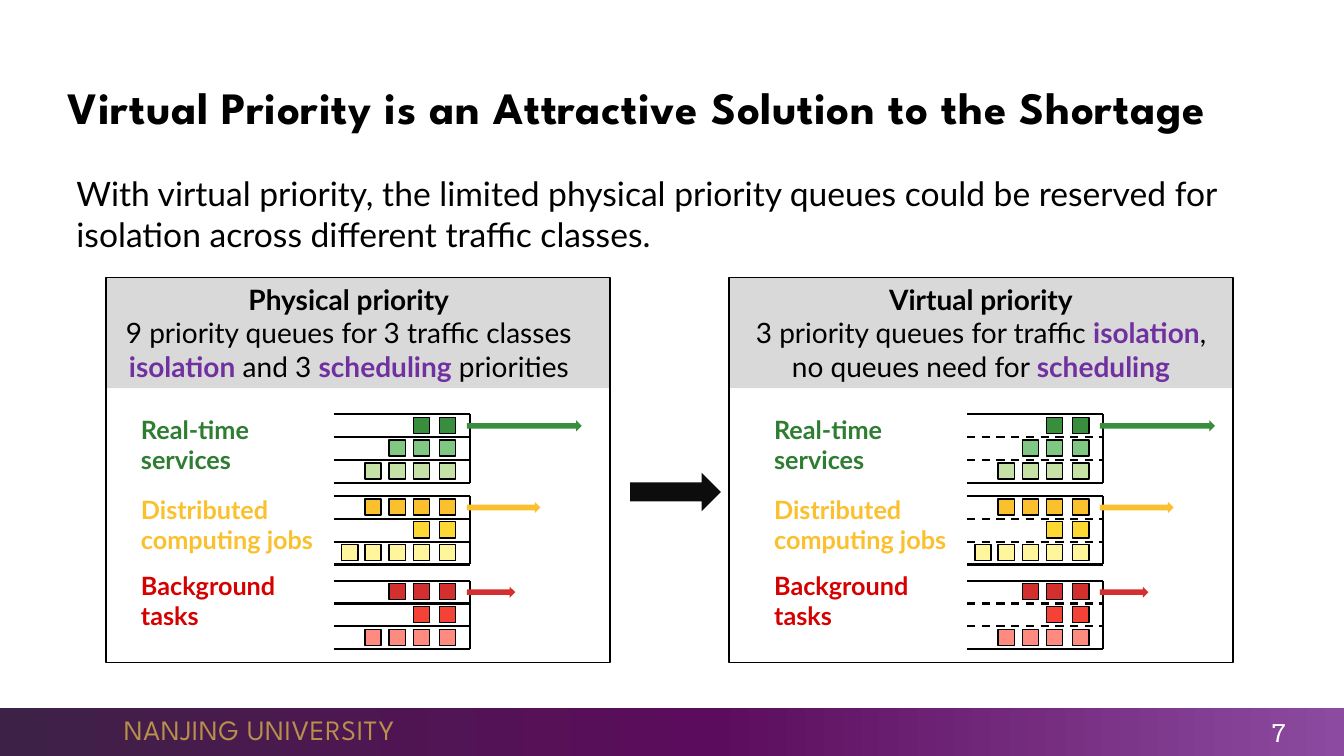
from copy import deepcopy
from dataclasses import dataclass

from pptx import Presentation
from pptx.dml.color import RGBColor
from pptx.enum.dml import MSO_LINE_DASH_STYLE
from pptx.enum.shapes import MSO_CONNECTOR, MSO_SHAPE
from pptx.enum.text import MSO_ANCHOR, PP_ALIGN
from pptx.oxml.ns import qn
from pptx.util import Inches, Pt

RECTANGLE, ARROW = MSO_SHAPE.RECTANGLE, MSO_SHAPE.RIGHT_ARROW
STRAIGHT, DASH = MSO_CONNECTOR.STRAIGHT, MSO_LINE_DASH_STYLE.DASH
TOP, MIDDLE = MSO_ANCHOR.TOP, MSO_ANCHOR.MIDDLE
LEFT, CENTER, RIGHT = PP_ALIGN.LEFT, PP_ALIGN.CENTER, PP_ALIGN.RIGHT


@dataclass(frozen=True)
class Theme:
    body_font: str = "Lato"
    title_font: str = "League Spartan"
    number_font: str = "Roboto Slab"
    title_size: int = 32
    body_size: int = 24
    heading_size: int = 20
    label_size: int = 18
    black: str = "000000"
    white: str = "FFFFFF"
    gold: str = "B88F4C"
    purple: str = "7030A0"
    panel_gray: str = "D9D9D9"
    big_arrow: str = "0D0D0D"
    footer: tuple = ((0, "3E2146"), (0.53, "5C0C5C"), (1, "8C4BA0"))
    green_label: str = "2E7D32"
    greens: tuple = ("388E3C", "81C784", "C5E1A5")
    yellow_label: str = "FBC02D"
    yellows: tuple = ("FBC02D", "FDD835", "FFF59D")
    red_label: str = "D50000"
    reds: tuple = ("D32F2F", "F44336", "FF8A80")


THEME = Theme()

# Traffic classes: label paragraphs, label top, queue top, label colour,
# queue colours, packets in each queue, length of the outgoing arrow
TRAFFIC_CLASSES = (
    (["Real-time services"], 4.06, 4.11, THEME.green_label, THEME.greens, (2, 3, 4), 1.14),
    (["Distributed computing jobs"], 4.85, 4.92, THEME.yellow_label, THEME.yellows, (4, 2, 5), 0.73),
    (["Background", "tasks"], 5.61, 5.76, THEME.red_label, THEME.reds, (3, 2, 4), 0.48),
)
QUEUE_LENGTH = 1.35
QUEUE_HEIGHT = 0.68 / 3
PACKET_SIZE = 0.16
PACKET_OFFSETS = (0.3, 0.56, 0.8, 1.04, 1.27)  # leftward from the queue exit


def write_run(paragraph, text, *, size, font, color, bold=False, spacing=0):
    run = paragraph.add_run()
    run.text = text
    run.font.size = Pt(size)
    run.font.name = font
    run.font.bold = bold
    run.font.color.rgb = RGBColor.from_string(color)
    if spacing:
        run.font._element.set("spc", str(int(spacing * 100)))


class SlideBuilder:
    def __init__(self, slide, theme):
        self.slide = slide
        self.theme = theme

    def shape(self, kind, left, top, width, height, fill=None, outlined=False):
        shape = self.slide.shapes.add_shape(
            kind, Inches(left), Inches(top), Inches(width), Inches(height))
        shape.shadow.inherit = False
        if fill:
            shape.fill.solid()
            shape.fill.fore_color.rgb = RGBColor.from_string(fill)
        else:
            shape.fill.background()
        if outlined:
            shape.line.color.rgb = RGBColor.from_string(self.theme.black)
            shape.line.width = Pt(1)
        else:
            shape.line.fill.background()
        return shape

    def line(self, start_x, start_y, end_x, end_y, dashed=False):
        connector = self.slide.shapes.add_connector(
            STRAIGHT, Inches(start_x), Inches(start_y), Inches(end_x), Inches(end_y))
        connector.line.color.rgb = RGBColor.from_string(self.theme.black)
        connector.line.width = Pt(1.5)
        if dashed:
            connector.line.dash_style = DASH
        properties = connector._element.spPr
        properties.append(properties.makeelement(qn("a:effectLst"), {}))

    def text(self, left, top, width, height, paragraphs, *, align=LEFT, anchor=TOP, **style):
        """Each paragraph is a string or a list of (text, style changes)."""
        box = self.slide.shapes.add_textbox(
            Inches(left), Inches(top), Inches(width), Inches(height))
        frame = box.text_frame
        frame.word_wrap = True
        frame.vertical_anchor = anchor
        for index, content in enumerate(paragraphs):
            paragraph = frame.add_paragraph() if index else frame.paragraphs[0]
            paragraph.alignment = align
            runs = [(content, {})] if isinstance(content, str) else content
            for text, changes in runs:
                write_run(paragraph, text, **{**style, **changes})

    def footer(self):
        theme = self.theme
        band = self.shape(RECTANGLE, 0, 7.02, 13.33, 0.48)
        band.fill.gradient()
        band.fill.gradient_angle = 0
        stop_list = band._element.spPr.find(qn("a:gradFill")).find(qn("a:gsLst"))
        stop_list.insert(1, deepcopy(stop_list[0]))
        for stop, (position, color) in zip(band.fill.gradient_stops, theme.footer):
            stop.position = position
            stop.color.rgb = RGBColor.from_string(color)
        self.text(1.13, 7.02, 3.17, 0.44, ["NANJING UNIVERSITY"], anchor=MIDDLE,
                  size=theme.heading_size, font=theme.title_font, color=theme.gold, spacing=0.5)
        self.text(11.79, 7.09, 1.06, 0.35, ["7"], align=RIGHT, anchor=MIDDLE,
                  size=theme.label_size, font=theme.number_font, color=theme.white)

    def queues(self, left, top, colors, packet_counts, arrow_length, dashed):
        exit_x = left + QUEUE_LENGTH
        self.line(left, top, exit_x, top)
        for row, (color, count) in enumerate(zip(colors, packet_counts)):
            row_top = top + row * QUEUE_HEIGHT
            bottom = row_top + QUEUE_HEIGHT
            is_last = row == len(colors) - 1
            self.line(exit_x, bottom, exit_x, row_top)
            self.line(left, bottom, exit_x, bottom, dashed and not is_last)
            for offset in PACKET_OFFSETS[:count]:
                self.shape(RECTANGLE, exit_x - offset, row_top + 0.03,
                           PACKET_SIZE, PACKET_SIZE, color, outlined=True)
        self.shape(ARROW, exit_x - 0.03, top + 0.06, arrow_length, 0.11, colors[0])

    def panel(self, left, content_left, heading_left, heading_width, heading, dashed):
        theme = self.theme
        self.shape(RECTANGLE, left, 2.75, 5, 1.1, theme.panel_gray)
        self.shape(RECTANGLE, left, 2.75, 5, 3.82, outlined=True)
        self.text(heading_left, 2.75, heading_width, 1.11, heading, align=CENTER,
                  size=theme.heading_size, font=theme.body_font, color=theme.black)
        for label, label_top, queue_top, color, *queue_style in TRAFFIC_CLASSES:
            self.queues(content_left + 2.01, queue_top, *queue_style, dashed)
            self.text(content_left, label_top, 2.17, 0.71, label, bold=True,
                      size=theme.label_size, font=theme.body_font, color=color)


def main():
    presentation = Presentation()
    presentation.slide_width = Inches(13.33)
    presentation.slide_height = Inches(7.5)
    slide = presentation.slides.add_slide(presentation.slide_layouts[6])
    builder = SlideBuilder(slide, THEME)

    # Footer, title and introduction
    builder.footer()
    builder.text(0.57, 0.67, 12.33, 0.77,
                 ["Virtual Priority is an Attractive Solution to the Shortage"],
                 anchor=MIDDLE, size=THEME.title_size, font=THEME.title_font,
                 color=THEME.black, bold=True, spacing=0.5)
    builder.text(0.66, 1.67, 11.64, 0.91,
                 ["With virtual priority, the limited physical priority queues could be "
                  "reserved for isolation across different traffic classes."],
                 size=THEME.body_size, font=THEME.body_font, color=THEME.black)

    # Physical and virtual priority panels
    bold = {"bold": True}
    accent = {"bold": True, "color": THEME.purple}
    physical_heading = [
        [("Physical priority", bold)],
        [("9 priority queues for 3 traffic classes ", {}), ("isolation", accent),
         (" and 3 ", {}), ("scheduling", accent), (" priorities", {})],
    ]
    virtual_heading = [
        [("Virtual priority", bold)],
        [("3 priority queues for traffic ", {}), ("isolation", accent),
         (", no queues need for ", {}), ("scheduling", accent)],
    ]
    builder.panel(1.05, 1.3, 0.99, 4.94, physical_heading, dashed=False)
    builder.panel(7.23, 7.58, 7.23, 5, virtual_heading, dashed=True)

    # Arrow between the panels
    builder.shape(ARROW, 6.25, 4.69, 0.9, 0.38, THEME.big_arrow)

    presentation.save("out.pptx")


if __name__ == "__main__":
    main()
